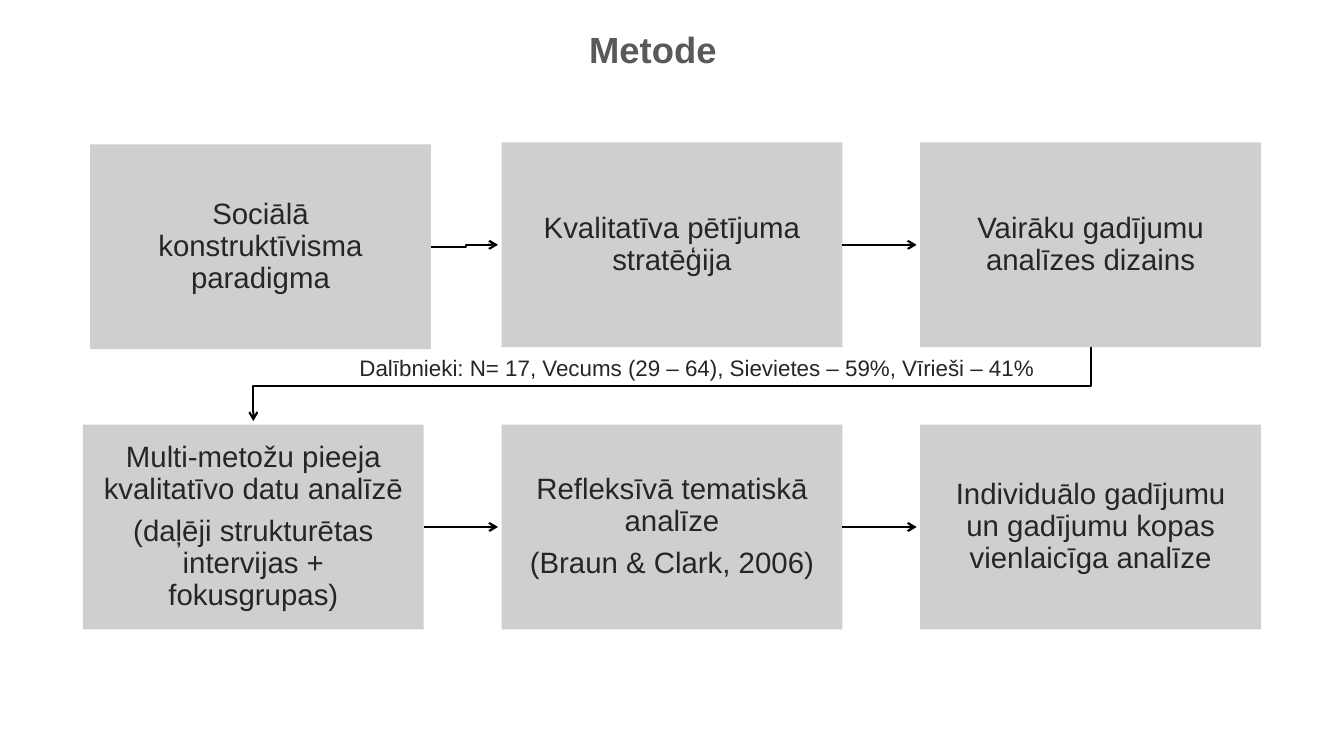
from lxml import etree
from pptx import Presentation
from pptx import util as u
from pptx.dml import color
from pptx.enum import shapes, text
from pptx.oxml import ns

COLORS = {"title": "58595B", "body": "262626", "box": "D0CECE", "arrow": "000000"}
Cm = u.Cm

# Grid of steps, in cm
BOX_W, BOX_H = 8.59, 5.16
PITCH_X, PITCH_Y = 10.55, 7.11
FIRST_NUDGE = (0.18, 0.05)
TIP_GAP = 0.09

STEPS = [
    [["Sociālā konstruktīvisma paradigma"],
     ["Kvalitatīva pētījuma stratēģija"],
     ["Vairāku gadījumu analīzes dizains"]],
    [["Multi-metožu pieeja kvalitatīvo datu analīzē",
      "(daļēji strukturētas intervijas + fokusgrupas)"],
     ["Refleksīvā tematiskā analīze", "(Braun & Clark, 2006)"],
     ["Individuālo gadījumu un gadījumu kopas vienlaicīga analīze"]],
]


def write(frame, paragraphs, size, ink="body", bold=False, align=text.PP_ALIGN.CENTER,
          spacing=0.9, after=0, anchor=text.MSO_ANCHOR.TOP, insets=(0, 0)):
    frame.word_wrap = True
    frame.vertical_anchor = anchor
    frame.margin_left = frame.margin_right = Cm(insets[0])
    frame.margin_top = frame.margin_bottom = Cm(insets[1])
    for index, wording in enumerate(paragraphs):
        paragraph = frame.add_paragraph() if index else frame.paragraphs[0]
        paragraph.alignment = align
        paragraph.line_spacing = spacing
        paragraph.space_after = u.Pt(after)
        run = paragraph.add_run()
        run.text = wording
        run.font.name = "Arial"
        run.font.size = u.Pt(size)
        run.font.bold = bold
        run.font.color.rgb = color.RGBColor.from_string(COLORS[ink])


def style_arrow(arrow):
    arrow.line.color.rgb = color.RGBColor.from_string(COLORS["arrow"])
    arrow.line.width = u.Pt(1.5)
    properties = arrow._element.spPr
    etree.SubElement(properties.find(ns.qn("a:ln")), ns.qn("a:tailEnd"), type="arrow")
    if properties.find(ns.qn("a:effectLst")) is None:
        etree.SubElement(properties, ns.qn("a:effectLst"))


def straight_arrow(slide, source, target):
    middle = source.top + source.height // 2
    arrow = slide.shapes.add_connector(
        shapes.MSO_CONNECTOR.STRAIGHT, source.left + source.width, middle,
        target.left - Cm(TIP_GAP), middle)
    arrow.begin_connect(source, 3)
    style_arrow(arrow)


def bent_arrow(slide, points):
    builder = slide.shapes.build_freeform(*points[0])
    builder.add_line_segments(points[1:], close=False)
    arrow = builder.convert_to_shape()
    arrow.fill.background()
    arrow.shadow.inherit = False
    style_arrow(arrow)


def add_step(slide, left, top, paragraphs):
    step = slide.shapes.add_shape(shapes.MSO_SHAPE.RECTANGLE,
                                  Cm(left), Cm(top), Cm(BOX_W), Cm(BOX_H))
    step.shadow.inherit = False
    step.fill.solid()
    step.fill.fore_color.rgb = color.RGBColor.from_string(COLORS["box"])
    step.line.fill.background()
    write(step.text_frame, paragraphs, 21, after=7.35,
          anchor=text.MSO_ANCHOR.MIDDLE, insets=(0.43, 0.43))
    return step


def add_process(slide, left, top):
    # Steps, the first one slightly shifted
    rows = []
    for r, row in enumerate(STEPS):
        steps = []
        for c, paragraphs in enumerate(row):
            dx, dy = FIRST_NUDGE if r == c == 0 else (0, 0)
            steps.append(add_step(slide, left + c * PITCH_X + dx,
                                  top + r * PITCH_Y + dy, paragraphs))
        rows.append(steps)
    (paradigm, strategy, design), (data, themes, cases) = rows

    # Arrows along the rows
    for source, target in [(strategy, design), (data, themes), (themes, cases)]:
        straight_arrow(slide, source, target)
    start_x, end_x = paradigm.left + paradigm.width, strategy.left - Cm(TIP_GAP)
    start_y = paradigm.top + paradigm.height // 2
    end_y = strategy.top + strategy.height // 2
    bend_x = (start_x + strategy.left) // 2
    bent_arrow(slide, [(start_x, start_y), (bend_x, start_y),
                       (bend_x, end_y), (end_x, end_y)])

    # Arrow from the first row down to the second
    start_x, end_x = design.left + design.width // 2, data.left + data.width // 2
    start_y = design.top + design.height
    bend_y = (start_y + data.top) // 2
    bent_arrow(slide, [(start_x, start_y), (start_x, bend_y),
                       (end_x, bend_y), (end_x, data.top - Cm(TIP_GAP))])


def add_title(slide, left, top, width, height):
    title = slide.shapes.add_textbox(Cm(left), Cm(top), Cm(width), Cm(height))
    write(title.text_frame, ["Metode"], 26, ink="title", bold=True)


def add_participants(slide, left, top, width, height):
    participants = slide.shapes.add_textbox(Cm(left), Cm(top), Cm(width), Cm(height))
    write(participants.text_frame,
          ["Dalībnieki: N= 17, Vecums (29 – 64), Sievietes – 59%, Vīrieši – 41%"],
          16, align=text.PP_ALIGN.LEFT, spacing=1.0, insets=(0.25, 0.13))


def main():
    deck = Presentation()
    deck.slide_width, deck.slide_height = Cm(33.87), Cm(19.05)
    slide = deck.slides.add_slide(deck.slide_layouts[6])
    add_title(slide, 1.85, 0.81, 29.21, 2.87)
    add_process(slide, 2.09, 3.59)
    add_participants(slide, 8.81, 8.79, 17.91, 0.94)
    deck.save("out.pptx")


if __name__ == "__main__":
    main()
